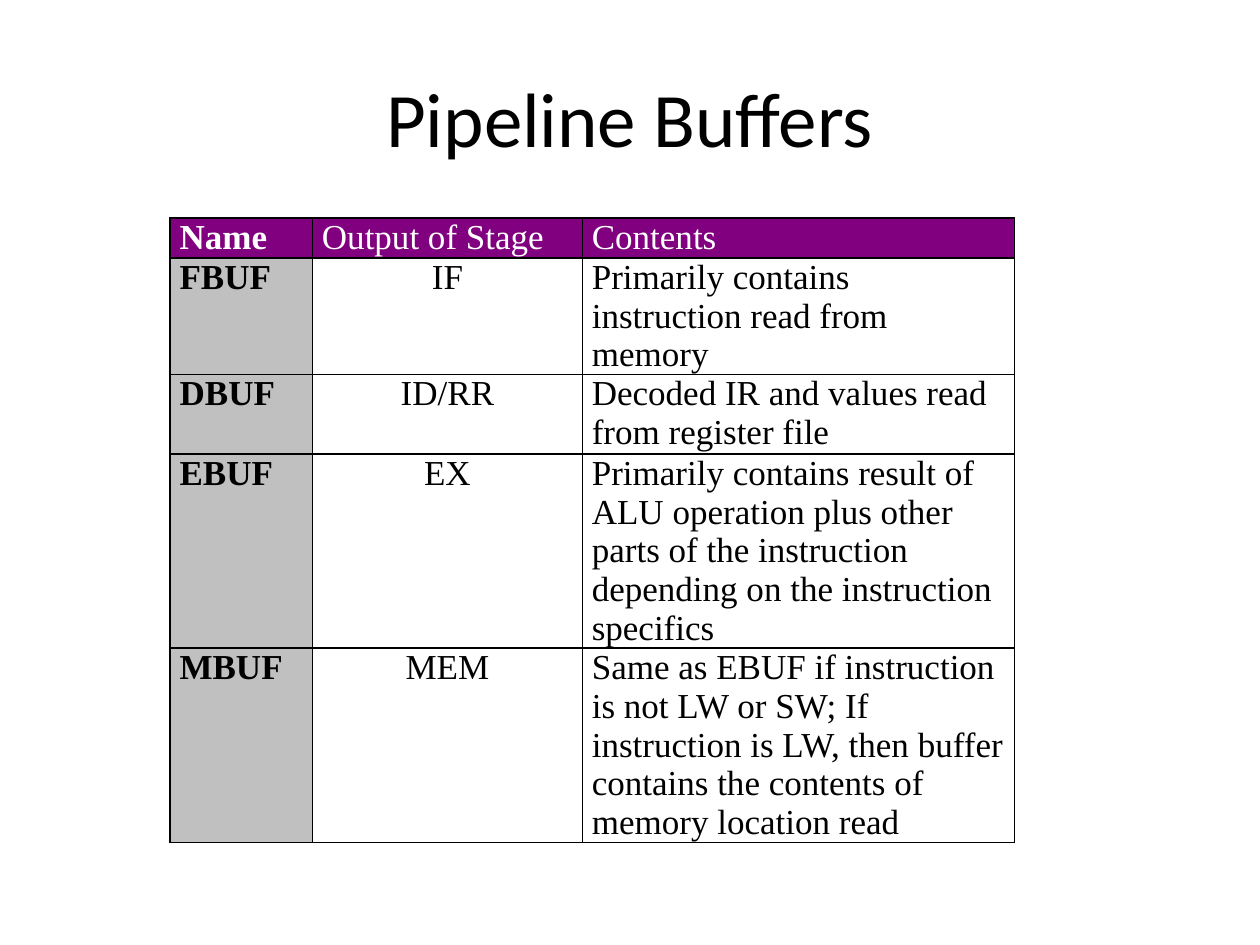
from lxml.etree import SubElement
from pptx import Presentation
from pptx.dml.color import RGBColor
from pptx.enum.text import MSO_ANCHOR, PP_ALIGN
from pptx.oxml.ns import qn
from pptx.util import Cm, Pt

COLORS = {"text": "000000", "header text": "FFFFFF", "header": "800080",
          "name": "C0C0C0", "border": "000000"}
ROWS = [
    ("Name", "Output of Stage", "Contents"),
    ("FBUF", "IF", "Primarily contains instruction read from memory"),
    ("DBUF", "ID/RR", "Decoded IR and values read from register file"),
    ("EBUF", "EX", "Primarily contains result of ALU operation plus other parts "
                   "of the instruction depending on the instruction specifics"),
    ("MBUF", "MEM", "Same as EBUF if instruction is not LW or SW; If instruction "
                    "is LW, then buffer contains the contents of memory location read"),
]
COLUMN_WIDTHS = [2.87, 5.44, 8.71]
ROW_HEIGHTS = [0.81, 1.6, 1.6, 3.2, 3.2]


def format_text(para, font_name, size, color, bold=False):
    for span in para.runs:
        span.font.name = font_name
        span.font.size = Pt(size)
        span.font.bold = bold
        span.font.color.rgb = RGBColor.from_string(COLORS[color])


def add_borders(cell):
    properties = cell._tc.get_or_add_tcPr()
    for side in ("a:lnL", "a:lnR", "a:lnT", "a:lnB"):
        line = SubElement(properties, qn(side), w=str(Pt(1)))
        fill = SubElement(line, qn("a:solidFill"))
        SubElement(fill, qn("a:srgbClr"), val=COLORS["border"])


deck = Presentation()
deck.slide_width, deck.slide_height = Cm(25.4), Cm(19.05)
page = deck.slides.add_slide(deck.slide_layouts[5])

title = page.shapes.title
title.left, title.top, title.width, title.height = Cm(1.27), Cm(0.76), Cm(22.86), Cm(3.18)
title.text_frame.text = "Pipeline Buffers"
title.text_frame.vertical_anchor = MSO_ANCHOR.MIDDLE
title_para = title.text_frame.paragraphs[0]
title_para.alignment = PP_ALIGN.CENTER
format_text(title_para, "Calibri", 44, "text")

table = page.shapes.add_table(len(ROWS), len(COLUMN_WIDTHS), Cm(3.43), Cm(4.39),
                              Cm(sum(COLUMN_WIDTHS)), Cm(sum(ROW_HEIGHTS))).table
table.horz_banding = False
for column, width in zip(table.columns, COLUMN_WIDTHS):
    column.width = Cm(width)
for row, height in zip(table.rows, ROW_HEIGHTS):
    row.height = Cm(height)

for row_index, texts in enumerate(ROWS):
    is_header = row_index == 0
    for column_index, text in enumerate(texts):
        cell = table.cell(row_index, column_index)
        cell.margin_left = cell.margin_right = Cm(0.19)
        cell.margin_top = cell.margin_bottom = 0
        add_borders(cell)
        if is_header or column_index == 0:
            cell.fill.solid()
            fill_color = COLORS["header" if is_header else "name"]
            cell.fill.fore_color.rgb = RGBColor.from_string(fill_color)
        else:
            cell.fill.background()
        cell.text_frame.text = text
        para = cell.text_frame.paragraphs[0]
        centered = column_index == 1 and not is_header
        para.alignment = PP_ALIGN.CENTER if centered else PP_ALIGN.LEFT
        format_text(para, "Times New Roman", 20,
                    "header text" if is_header else "text", bold=column_index == 0)

deck.save("out.pptx")
